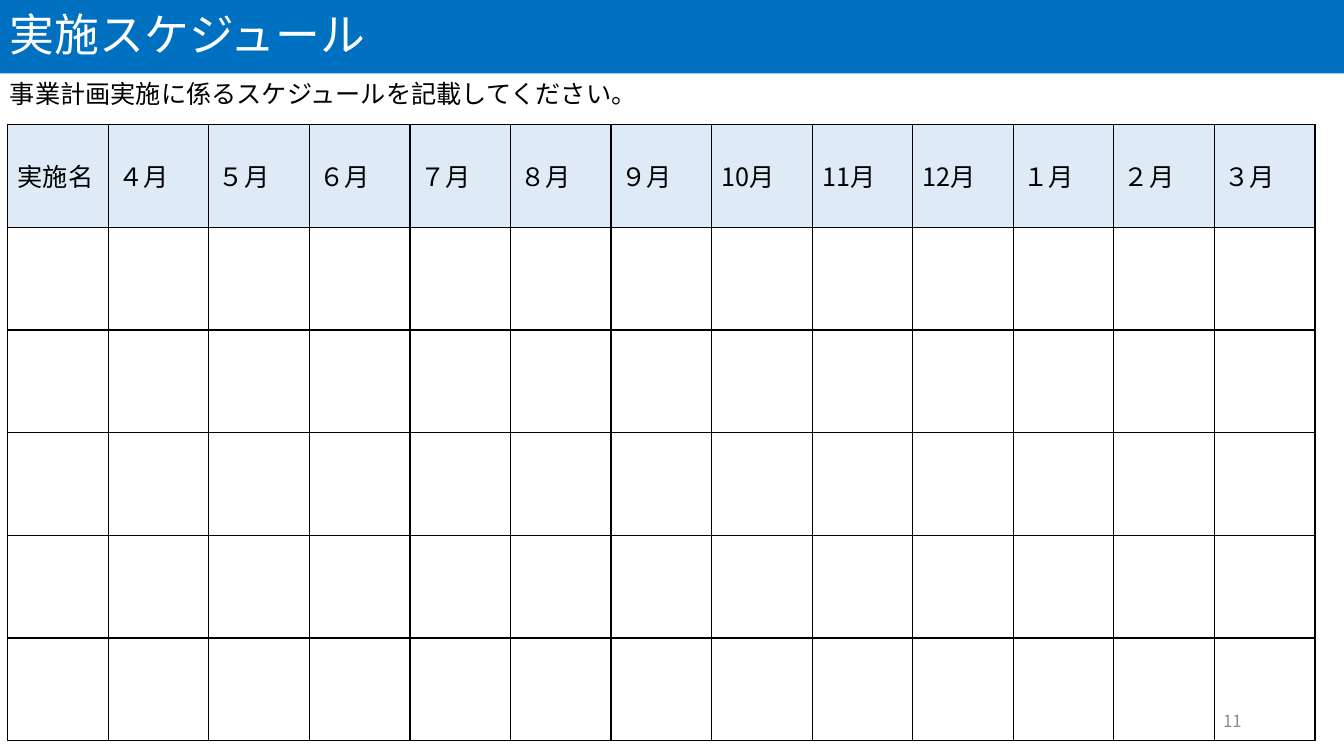
from dataclasses import dataclass

from lxml import etree
from pptx import Presentation
from pptx.dml.color import RGBColor
from pptx.enum import shapes, text
from pptx.oxml import ns
from pptx.util import Pt


@dataclass(frozen=True)
class Theme:
    banner: RGBColor = RGBColor(0x00, 0x70, 0xC0)
    header: RGBColor = RGBColor(0xDE, 0xEB, 0xF7)
    white: RGBColor = RGBColor(0xFF, 0xFF, 0xFF)
    ink: RGBColor = RGBColor(0, 0, 0)
    muted: RGBColor = RGBColor(0x8C, 0x8C, 0x8C)
    title_font: str = "Calibri"
    body_font: str = "Noto Sans CJK JP"
    month_font: str = "TeX Gyre Pagella"
    title_size: int = 32
    body_size: int = 18
    number_size: int = 12


THEME = Theme()
SLIDE_WIDTH, SLIDE_HEIGHT = 960, 540
BANNER_HEIGHT = 52.5
BODY_ROWS = 5
COLUMN_WIDTH, ROW_HEIGHT = 71.83, 73.35
HEADINGS = [
    ["実施名"], ["４月"], ["５月"], ["６月"], ["７月"], ["８月"], ["９月"],
    ["10", "月"], ["11", "月"], ["12", "月"], ["１月"], ["２月"], ["３月"],
]


def style_run(run, size, color, font):
    """Set the Latin font as given and the East Asian font to the body font."""
    run.font.size = Pt(size)
    run.font.color.rgb = color
    run.font.name = font
    east_asian = etree.SubElement(run.font._element, ns.qn("a:ea"))
    east_asian.set("typeface", THEME.body_font)


def write_line(frame, wording, size, color, font=THEME.body_font,
               align=text.PP_ALIGN.LEFT):
    frame.text = wording
    line = frame.paragraphs[0]
    line.alignment = align
    style_run(line.runs[0], size, color, font)
    return line


def add_banner(slide, title):
    banner = slide.shapes.add_shape(
        shapes.MSO_SHAPE.RECTANGLE, 0, 0, Pt(SLIDE_WIDTH), Pt(BANNER_HEIGHT))
    banner.shadow.inherit = False
    banner.fill.solid()
    banner.fill.fore_color.rgb = THEME.banner
    banner.line.fill.background()
    banner.text_frame.vertical_anchor = text.MSO_ANCHOR.MIDDLE
    line = write_line(banner.text_frame, title, THEME.title_size, THEME.white,
                      THEME.title_font)
    line.line_spacing = 0.9


def add_label(slide, wording, box, size, color, align=text.PP_ALIGN.LEFT,
              anchor=text.MSO_ANCHOR.TOP):
    label = slide.shapes.add_textbox(*map(Pt, box)).text_frame
    label.word_wrap = True
    label.vertical_anchor = anchor
    write_line(label, wording, size, color, align=align)


def outline_cell(cell):
    """Draw the four borders, which must precede the cell's fill."""
    properties = cell._tc.get_or_add_tcPr()
    for position, side in enumerate(("lnL", "lnR", "lnT", "lnB")):
        border = etree.Element(ns.qn(f"a:{side}"), w=str(Pt(1)))
        fill = etree.SubElement(border, ns.qn("a:solidFill"))
        etree.SubElement(fill, ns.qn("a:srgbClr"), val=str(THEME.ink))
        properties.insert(position, border)


def write_heading(cell, parts):
    line = cell.text_frame.paragraphs[0]
    for part in parts:
        run = line.add_run()
        run.text = part
        split_month = len(parts) > 1 and part == "月"
        font = THEME.month_font if split_month else THEME.body_font
        style_run(run, THEME.body_size, THEME.ink, font)


def add_schedule(slide, left, top):
    row_count, column_count = BODY_ROWS + 1, len(HEADINGS)
    schedule = slide.shapes.add_table(
        row_count, column_count, Pt(left), Pt(top),
        Pt(COLUMN_WIDTH * column_count), Pt(ROW_HEIGHT * row_count)).table
    schedule.first_row = schedule.horz_banding = False
    for column in schedule.columns:
        column.width = Pt(COLUMN_WIDTH)
    for row in schedule.rows:
        row.height = Pt(ROW_HEIGHT)
    for cell in schedule.iter_cells():
        cell.fill.background()
        outline_cell(cell)
    for cell, parts in zip(schedule.rows[0].cells, HEADINGS):
        cell.fill.solid()
        cell.fill.fore_color.rgb = THEME.header
        cell.vertical_anchor = text.MSO_ANCHOR.MIDDLE
        write_heading(cell, parts)


def main():
    deck = Presentation()
    deck.slide_width, deck.slide_height = Pt(SLIDE_WIDTH), Pt(SLIDE_HEIGHT)
    slide = deck.slides.add_slide(deck.slide_layouts[6])
    add_banner(slide, "実施スケジュール")
    add_label(slide, "事業計画実施に係るスケジュールを記載してください。",
              (0, BANNER_HEIGHT, 534, 29), THEME.body_size, THEME.ink)
    add_schedule(slide, 5.5, 89)
    add_label(slide, "11", (678, 500.5, 216, 28.75), THEME.number_size,
              THEME.muted, text.PP_ALIGN.RIGHT, text.MSO_ANCHOR.MIDDLE)
    deck.save("out.pptx")


if __name__ == "__main__":
    main()
